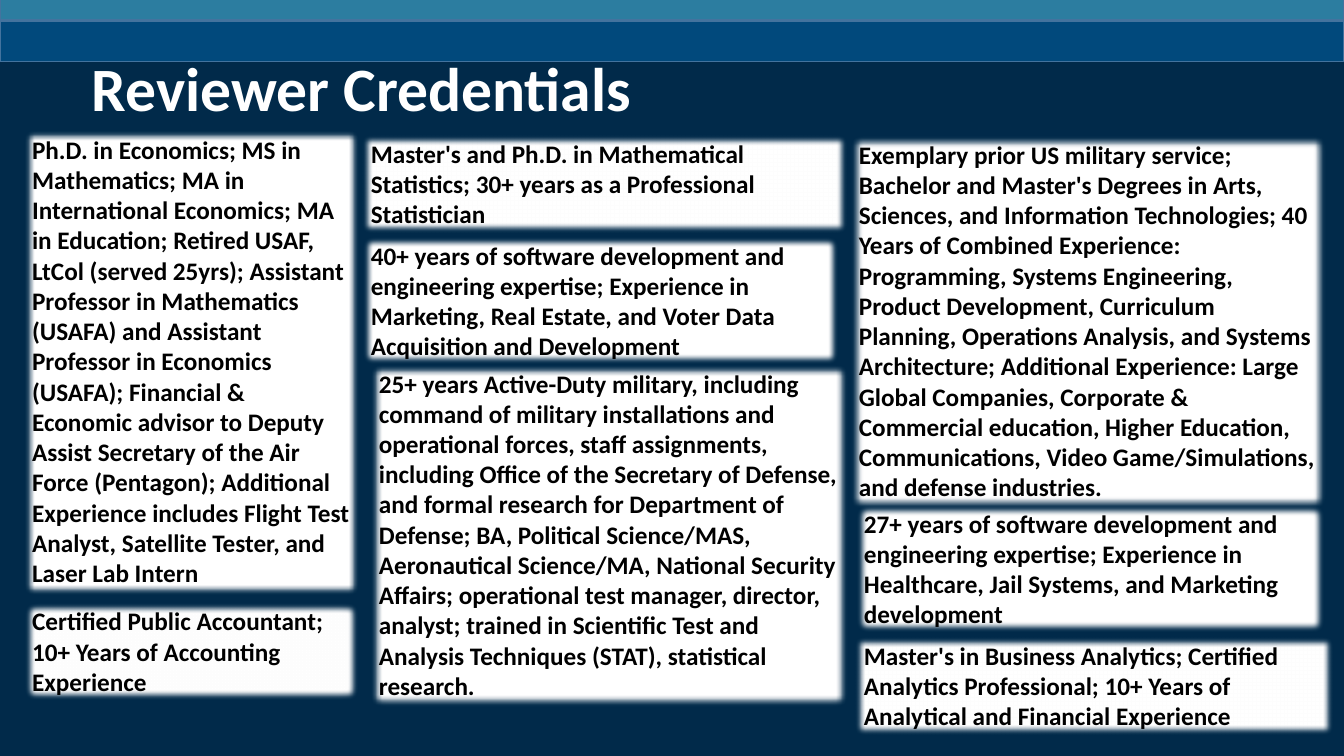
from lxml import etree
from pptx import Presentation
from pptx.dml.color import RGBColor
from pptx.enum import shapes, text
from pptx.oxml.ns import qn
from pptx.util import Emu, Inches, Pt

# Content: each card is (left, top, width, height, words)
TITLE = "Reviewer Credentials"
CARDS = [
    (0.22, 1.28, 3.36, 4.64,
     "Ph.D. in Economics; MS in Mathematics; MA in International Economics; "
     "MA in Education; Retired USAF, LtCol (served 25yrs); Assistant Professor "
     "in Mathematics (USAFA) and Assistant Professor in Economics (USAFA); "
     "Financial & Economic advisor to Deputy Assist Secretary of the Air Force "
     "(Pentagon); Additional Experience includes Flight Test Analyst, "
     "Satellite Tester, and Laser Lab Intern"),
    (8.42, 1.33, 4.75, 3.74,
     "Exemplary prior US military service; Bachelor and Master's Degrees in "
     "Arts, Sciences, and Information Technologies; 40 Years of Combined "
     "Experience: Programming, Systems Engineering, Product Development, "
     "Curriculum Planning, Operations Analysis, and Systems Architecture; "
     "Additional Experience: Large Global Companies, Corporate & Commercial "
     "education, Higher Education, Communications, Video Game/Simulations, "
     "and defense industries."),
    (3.66, 3.6, 4.77, 3.43,
     "25+ years Active-Duty military, including command of military "
     "installations and operational forces, staff assignments, including "
     "Office of the Secretary of Defense, and formal research for Department "
     "of Defense; BA, Political Science/MAS, Aeronautical Science/MA, National "
     "Security Affairs; operational test manager, director, analyst; trained "
     "in Scientific Test and Analysis Techniques (STAT), statistical research."),
    (3.58, 1.32, 4.84, 1.01,
     "Master's and Ph.D. in Mathematical Statistics; 30+ years as a "
     "Professional Statistician"),
    (8.47, 6.3, 4.77, 1.01,
     "Master's in Business Analytics; Certified Analytics Professional; "
     "10+ Years of Analytical and Financial Experience"),
    (0.22, 5.96, 3.36, 1.01,
     "Certified Public Accountant; 10+ Years of Accounting Experience"),
    (8.47, 4.99, 4.69, 1.31,
     "27+ years of software development and engineering expertise; Experience "
     "in Healthcare, Jail Systems, and Marketing development"),
    (3.58, 2.33, 4.76, 1.31,
     "40+ years of software development and engineering expertise; Experience "
     "in Marketing, Real Estate, and Voter Data Acquisition and Development"),
]
BANDS = [(-0.02, 0.22, "teal"), (0.21, 0.4, "blue")]  # top, height, colour
WIDE = 13.33

THEME = {
    "font": "Calibri", "title": 44, "body": 18, "soft": 5,
    "navy": "012A4A", "teal": "2C7DA0", "blue": "01497C",
    "edge": "43739E", "white": "FFFFFF", "black": "000000",
}


def tint(name):
    return RGBColor.from_string(THEME[name])


def paint(shape, name):
    shape.fill.solid()
    shape.fill.fore_color.rgb = tint(name)


def style(par, size, name):
    par.font.name = THEME["font"]
    par.font.size = Pt(THEME[size])
    par.font.bold = True
    par.font.color.rgb = tint(name)
    par.alignment = text.PP_ALIGN.LEFT


def soften(shape):
    fx = etree.SubElement(shape._element.spPr, qn("a:effectLst"))
    etree.SubElement(fx, qn("a:softEdge"), rad=str(Emu(Pt(THEME["soft"]))))


deck = Presentation()
deck.slide_width, deck.slide_height = Inches(WIDE), Inches(7.5)
slide = deck.slides.add_slide(deck.slide_layouts[5])
slide.background.fill.solid()
slide.background.fill.fore_color.rgb = tint("navy")

# Bands across the top
for top, high, name in BANDS:
    band = slide.shapes.add_shape(
        shapes.MSO_SHAPE.RECTANGLE, 0, Inches(top), Inches(WIDE), Inches(high))
    band.shadow.inherit = False
    paint(band, name)
    band.line.color.rgb = tint("edge")
    band.line.width = Pt(1)

# Title
head = slide.shapes.title
head.left, head.top, head.width, head.height = map(
    Inches, (0.81, 0.18, 11.5, 1.45))
head.text_frame.text = TITLE
head.text_frame.vertical_anchor = text.MSO_ANCHOR.MIDDLE
line = head.text_frame.paragraphs[0]
line.line_spacing = 0.9
style(line, "title", "white")

# Credential cards with soft edges
for *place, words in CARDS:
    card = slide.shapes.add_textbox(*map(Inches, place))
    paint(card, "white")
    soften(card)
    frame = card.text_frame
    frame.word_wrap = True
    frame.auto_size = text.MSO_AUTO_SIZE.SHAPE_TO_FIT_TEXT
    frame.text = words
    style(frame.paragraphs[0], "body", "black")

deck.save("out.pptx")
